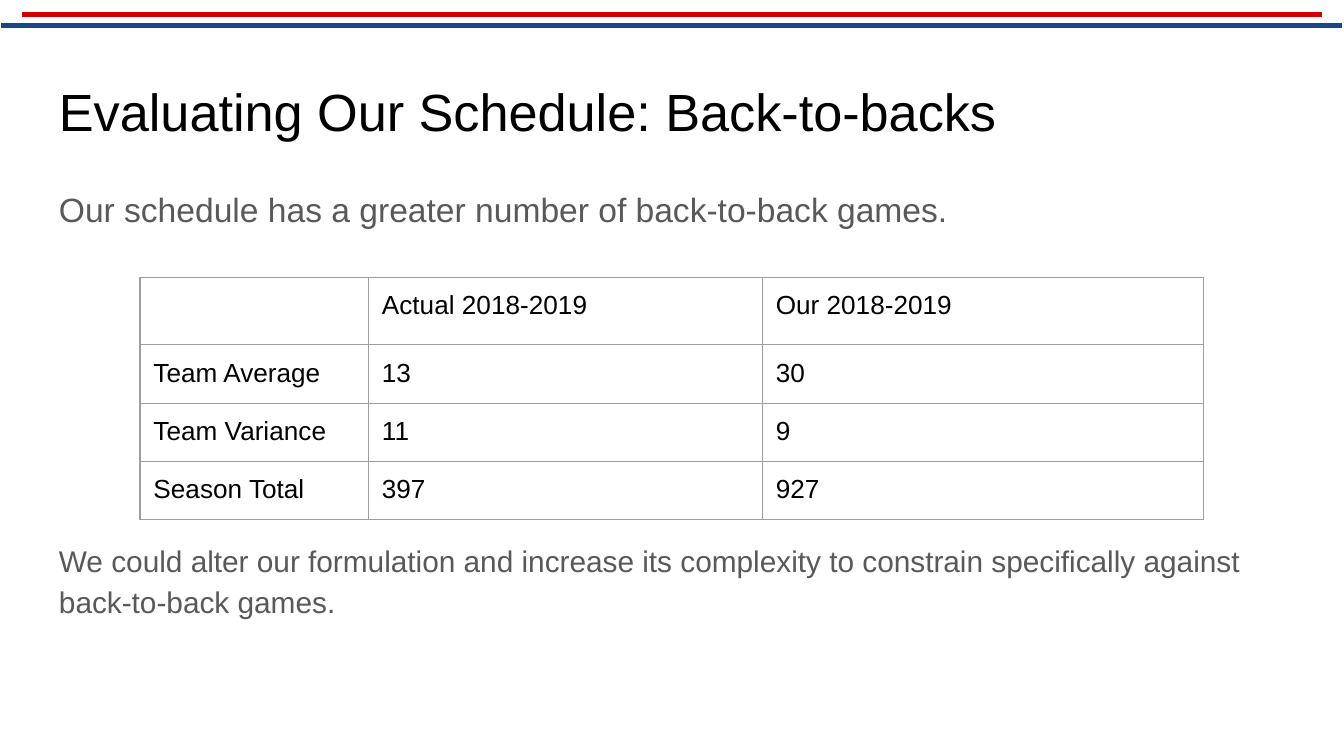
from pptx import Presentation
from pptx.dml.color import RGBColor
from pptx.enum.shapes import MSO_CONNECTOR
from pptx.oxml import parse_xml
from pptx.oxml.ns import nsdecls
from pptx.util import Pt

FONT = "Arial"
INSET = Pt(7.2)
ROWS = [
    ["", "Actual 2018-2019", "Our 2018-2019"],
    ["Team Average", "13", "30"],
    ["Team Variance", "11", "9"],
    ["Season Total", "397", "927"],
]
COLUMN_WIDTHS = [122.4, 211, 236.2]
ROW_HEIGHTS = [34.8, 30, 30, 30]


def color(hex_string):
    return RGBColor.from_string(hex_string)


def style_font(font, size, hex_string):
    font.name = FONT
    font.size = Pt(size)
    font.color.rgb = color(hex_string)


def set_insets(target):
    target.margin_left = target.margin_right = INSET
    target.margin_top = target.margin_bottom = INSET


def add_rule(slide, left, right, y, hex_string):
    rule = slide.shapes.add_connector(
        MSO_CONNECTOR.STRAIGHT, Pt(left), Pt(y), Pt(right), Pt(y))
    rule.line.color.rgb = color(hex_string)
    rule.line.width = Pt(3)
    rule._element.spPr.append(parse_xml(f"<a:effectLst {nsdecls('a')}/>"))


def add_text(slide, top, height, lines, hex_string):
    """Add a full-width text box; lines holds (text, size) pairs."""
    box = slide.shapes.add_textbox(Pt(24.5), Pt(top), Pt(671), Pt(height))
    text_frame = box.text_frame
    text_frame.word_wrap = True
    set_insets(text_frame)
    text_frame.text = "\n".join(text for text, size in lines)
    for paragraph, (text, size) in zip(text_frame.paragraphs, lines):
        style_font(paragraph.runs[0].font, size, hex_string)
    return text_frame.paragraphs


def add_borders(cell, hex_string, width):
    properties = cell._tc.get_or_add_tcPr()
    for index, side in enumerate(("lnL", "lnR", "lnT", "lnB")):
        properties.insert(index, parse_xml(
            f'<a:{side} {nsdecls("a")} w="{Pt(width)}"><a:solidFill>'
            f'<a:srgbClr val="{hex_string}"/></a:solidFill></a:{side}>'))


def add_schedule_table(slide, left, top):
    frame = slide.shapes.add_table(
        len(ROWS), len(COLUMN_WIDTHS), Pt(left), Pt(top),
        Pt(sum(COLUMN_WIDTHS)), Pt(sum(ROW_HEIGHTS)))
    table = frame.table
    table.first_row = table.horz_banding = False
    for column, width in zip(table.columns, COLUMN_WIDTHS):
        column.width = Pt(width)
    for row, height, texts in zip(table.rows, ROW_HEIGHTS, ROWS):
        row.height = Pt(height)
        for cell, text in zip(row.cells, texts):
            cell.text = text
            cell.fill.background()
            set_insets(cell)
            add_borders(cell, "9E9E9E", 0.75)
            for run in cell.text_frame.paragraphs[0].runs:
                style_font(run.font, 14, "000000")


def main():
    presentation = Presentation()
    presentation.slide_width = Pt(720)
    presentation.slide_height = Pt(405)
    slide = presentation.slides.add_slide(presentation.slide_layouts[6])

    # Header rules
    add_rule(slide, 0.7, 718.9, 13.6, "1C4587")
    add_rule(slide, 12, 708, 7.7, "CC0000")

    # Title
    add_text(slide, 35.3, 45.4,
             [("Evaluating Our Schedule: Back-to-backs", 28)], "000000")

    # Body, with room for the table between the two paragraphs
    finding, remedy = add_text(slide, 90.7, 282.2, [
        ("Our schedule has a greater number of back-to-back games.", 18),
        ("We could alter our formulation and increase its complexity to "
         "constrain specifically against back-to-back games.", 16),
    ], "595959")
    finding.line_spacing = remedy.line_spacing = 1.15
    remedy.space_before = Pt(165)
    remedy.space_after = Pt(16)

    # Back-to-back comparison
    add_schedule_table(slide, 75, 148.7)

    presentation.save("out.pptx")


if __name__ == "__main__":
    main()
